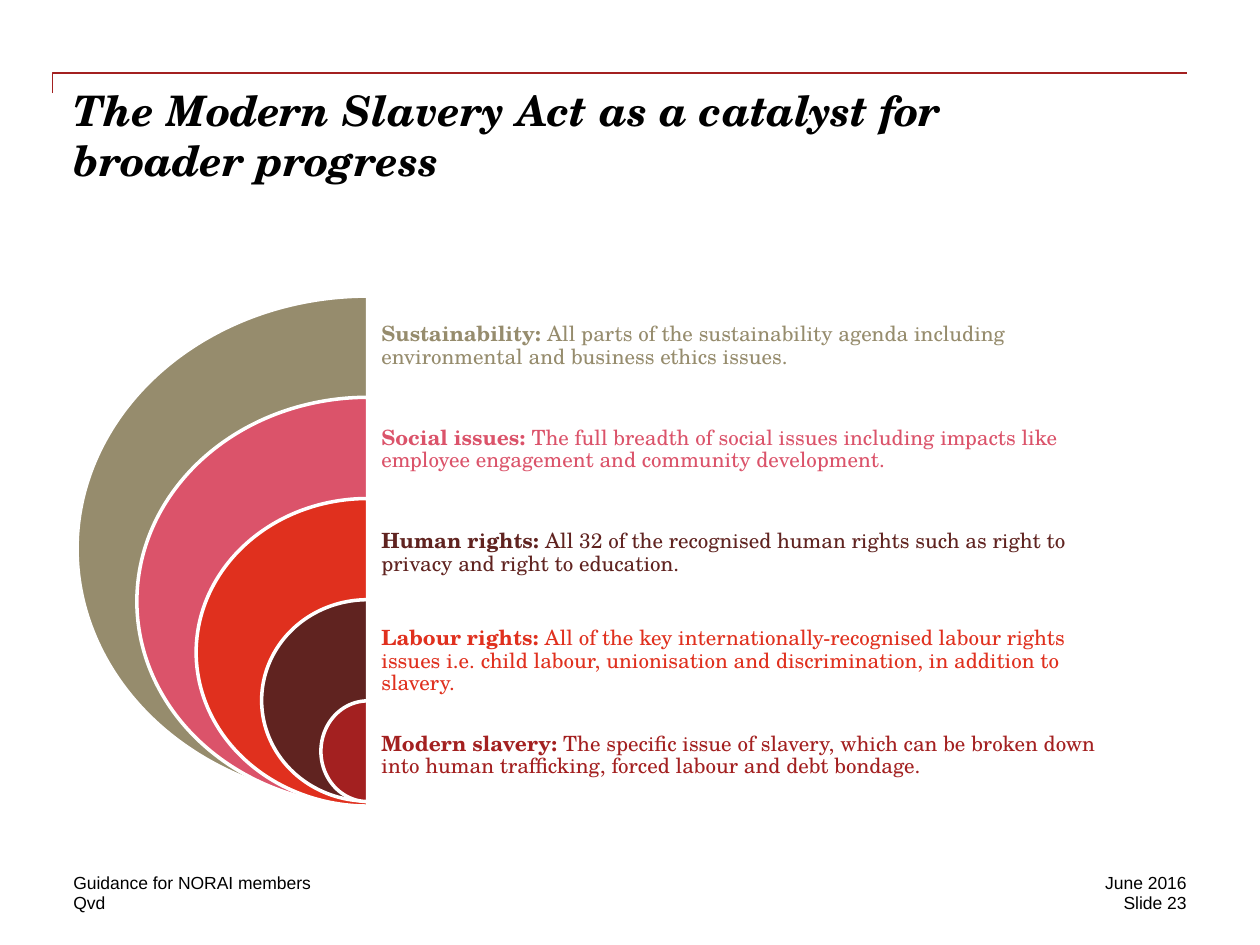
from pptx import Presentation
from pptx.dml.color import RGBColor
from pptx.enum import shapes, text
from pptx.util import Cm, Pt

BLACK = RGBColor(0x00, 0x00, 0x00)
WHITE = RGBColor(0xFF, 0xFF, 0xFF)
CRIMSON = RGBColor(0xA3, 0x20, 0x20)
KHAKI = RGBColor(0x96, 0x8C, 0x6D)
ROSE = RGBColor(0xDB, 0x53, 0x6A)
RED = RGBColor(0xE0, 0x30, 0x1E)
BROWN = RGBColor(0x60, 0x23, 0x20)
SERIF = "TeX Gyre Schola"

presentation = Presentation()
presentation.slide_width, presentation.slide_height = Cm(25.4), Cm(19.05)
slide = presentation.slides.add_slide(presentation.slide_layouts[6])


def add_text(left, top, width, height, content, font_name, size):
    """Add a black text box without margins and return its paragraph."""
    frame = slide.shapes.add_textbox(Cm(left), Cm(top), Cm(width), Cm(height)).text_frame
    frame.word_wrap = True
    frame.margin_left = frame.margin_top = frame.margin_right = frame.margin_bottom = 0
    paragraph = frame.paragraphs[0]
    paragraph.text = content
    paragraph.font.name = font_name
    paragraph.font.size = Pt(size)
    paragraph.font.color.rgb = BLACK
    return paragraph


def add_preset(kind, left, top, width, height, fill, line_width):
    """Add a white-outlined shape; a fill of None leaves it see-through."""
    shape = slide.shapes.add_shape(kind, Cm(left), Cm(top), Cm(width), Cm(height))
    shape.shadow.inherit = False
    if fill is None:
        shape.fill.background()
        shape.line.fill.background()
    else:
        shape.fill.solid()
        shape.fill.fore_color.rgb = fill
        shape.line.color.rgb = WHITE
        shape.line.width = Pt(line_width)
    return shape


# Header rule with a short drop at its left end
builder = slide.shapes.build_freeform(Cm(1.06), Cm(1.88))
builder.add_line_segments([(Cm(1.06), Cm(1.47)), (Cm(23.93), Cm(1.47))], close=False)
rule = builder.convert_to_shape()
rule.shadow.inherit = False
rule.fill.background()
rule.line.color.rgb = CRIMSON
rule.line.width = Pt(1)

title = add_text(1.48, 1.7, 22.43, 2.29,
                 "The Modern Slavery Act as a catalyst for \vbroader progress", SERIF, 24)
title.font.bold = title.font.italic = True

# Footer: two lines at each side
for top, left_text, right_text in [(17.58, "Guidance for NORAI members", "June 2016"),
                                   (17.98, "Qvd", "Slide 23")]:
    add_text(1.48, top, 7.4, 0.43, left_text, "Arial", 10)
    add_text(19.69, top, 4.23, 0.43, right_text, "Arial", 10).alignment = text.PP_ALIGN.RIGHT

# Nested half discs share a flat right edge; each has a description beside it
CENTRE = 7.41
FIRST_TOP, TOP_STEP = 5.97, 2.04
# heading, description, colour, disc width, disc height, panel top, panel height
levels = [
    ("Sustainability: ",
     "All parts of the sustainability agenda including environmental and business ethics issues.",
     KHAKI, 11.71, 10.19, 6.27, 12.57),
    ("Social issues: ",
     "The full breadth of social issues including impacts like employee engagement "
     "and community development.",
     ROSE, 9.3, 8.23, 8.36, 8.84),
    ("Human rights: ",
     "All 32 of the recognised human rights such as right to privacy and right to education.",
     BROWN, 6.91, 6.2, 10.44, 6.81),
    ("Labour rights: ",
     "All of the key internationally-recognised labour rights issues i.e. child labour, "
     "unionisation and discrimination, in addition to slavery.",
     RED, 4.27, 4.06, 12.4, 4.06),
    ("Modern slavery: ",
     "The specific issue of slavery, which can be broken down into human trafficking, "
     "forced labour and debt bondage.",
     CRIMSON, 1.88, 2.03, 14.53, 2.03),
]
disc_colours = [KHAKI, ROSE, RED, BROWN, CRIMSON]

for index, (heading, description, colour, width, height, panel_top, panel_height) in enumerate(levels):
    disc = add_preset(shapes.MSO_SHAPE.PIE, CENTRE - width / 2, FIRST_TOP + index * TOP_STEP,
                      width, height, disc_colours[index], 2)
    disc.adjustments[0], disc.adjustments[1] = 54, 162  # 90 to 270 degrees

    panel = add_preset(shapes.MSO_SHAPE.RECTANGLE, 7.44, panel_top, 15.54, panel_height,
                       WHITE if index else None, 1.25)
    frame = panel.text_frame
    frame.word_wrap = True
    frame.vertical_anchor = text.MSO_ANCHOR.TOP
    frame.margin_left = frame.margin_top = frame.margin_right = Cm(0.25)
    frame.margin_bottom = Cm(0.1)
    paragraph = frame.paragraphs[0]
    paragraph.alignment = text.PP_ALIGN.LEFT
    paragraph.line_spacing = 0.9
    paragraph.font.name = SERIF
    paragraph.font.size = Pt(12)
    paragraph.font.color.rgb = colour
    for content, bold in [(heading, True), (description, False)]:
        run = paragraph.add_run()
        run.text = content
        run.font.bold = bold

presentation.save("out.pptx")
